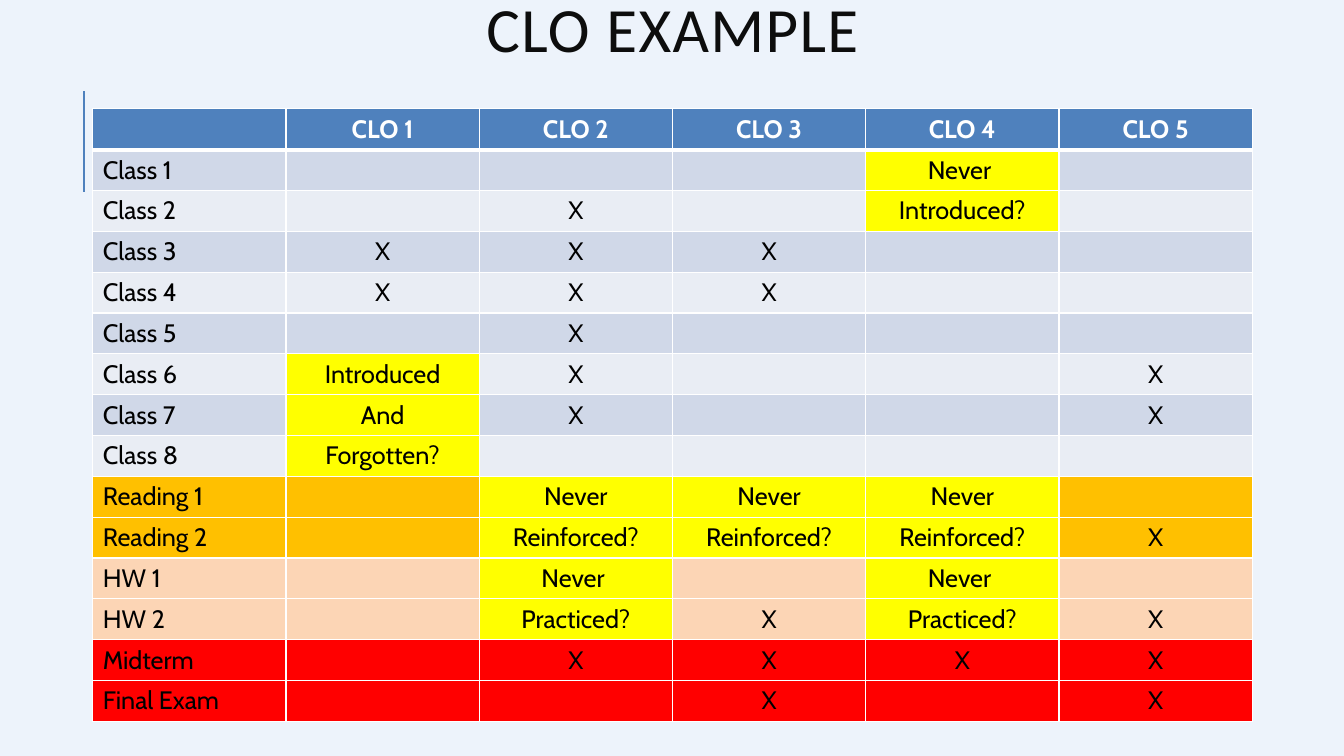
"""Build the CLO example slide: a course map of learning outcomes by activity."""
from dataclasses import dataclass

from lxml.etree import SubElement
from pptx import Presentation
from pptx.dml.color import RGBColor
from pptx.enum.shapes import MSO_CONNECTOR
from pptx.enum.text import MSO_ANCHOR, PP_ALIGN
from pptx.oxml import parse_xml
from pptx.oxml.ns import nsdecls, qn
from pptx.util import Inches, Pt

COLORS = {
    "background": "EDF3FB",
    "accent": "4F81BD",
    "title": "0D0D0D",
    "text": "000000",
    "white": "FFFFFF",
    "band_dark": "D0D8E8",
    "band_light": "E9EDF4",
    "reading": "FFC000",
    "homework": "FCD5B5",
    "exam": "FF0000",
    "gap": "FFFF00",
}


@dataclass(frozen=True)
class Activity:
    name: str
    fill: str
    marks: tuple[str, str, str, str, str]


HEADER = Activity("", "accent", ("CLO 1", "CLO 2", "CLO 3", "CLO 4", "CLO 5"))
ACTIVITIES = [
    Activity("Class 1", "band_dark", ("", "", "", "Never ", "")),
    Activity("Class 2", "band_light", ("", "X", "", "Introduced?", "")),
    Activity("Class 3", "band_dark", ("X", "X", "X", "", "")),
    Activity("Class 4", "band_light", ("X", "X", "X", "", "")),
    Activity("Class 5", "band_dark", ("", "X", "", "", "")),
    Activity("Class 6", "band_light", ("Introduced", "X", "", "", "X")),
    Activity("Class 7", "band_dark", ("And", "X", "", "", "X")),
    Activity("Class 8", "band_light", ("Forgotten?", "", "", "", "")),
    Activity("Reading 1", "reading", ("", "Never", "Never", "Never", "")),
    Activity("Reading 2", "reading", ("", "Reinforced?", "Reinforced?", "Reinforced?", "X")),
    Activity("HW 1", "homework", ("", "Never ", "", "Never ", "")),
    Activity("HW 2", "homework", ("", "Practiced?", "X", "Practiced?", "X")),
    Activity("Midterm", "exam", ("", "X", "X", "X", "X")),
    Activity("Final Exam", "exam", ("", "", "X", "", "X")),
]


def color(name: str) -> RGBColor:
    return RGBColor.from_string(COLORS[name])


def add_span(para, text: str, font_name: str, size: float, color_name: str, bold: bool = False):
    span = para.add_run()
    span.text = text
    span.font.name = font_name
    span.font.size = Pt(size)
    span.font.bold = bold
    span.font.color.rgb = color(color_name)
    return span


def add_title(page) -> None:
    box = page.shapes.add_textbox(Inches(0.92), Inches(0), Inches(11.5), Inches(0.68))
    frame = box.text_frame
    frame.word_wrap = True
    frame.vertical_anchor = MSO_ANCHOR.MIDDLE
    para = frame.paragraphs[0]
    para.alignment = PP_ALIGN.CENTER
    para.line_spacing = 0.8
    span = add_span(para, "CLO EXAMPLE", "Calibri", 45, "title")
    span.font._element.set("spc", "100")


def add_accent_line(page) -> None:
    line = page.shapes.add_connector(
        MSO_CONNECTOR.STRAIGHT, Inches(0.83), Inches(1.9), Inches(0.83), Inches(0.9)
    )
    line.line.color.rgb = color("accent")
    line.line.width = Pt(1.5)
    SubElement(line._element.spPr, qn("a:effectLst"))


def set_borders(cell, top: float, bottom: float) -> None:
    properties = cell._tc.get_or_add_tcPr()
    widths = {"lnL": 1, "lnR": 1, "lnT": top, "lnB": bottom}
    for index, (side, width) in enumerate(widths.items()):
        border = parse_xml(
            f'<a:{side} {nsdecls("a")} w="{Pt(width)}"><a:solidFill>'
            f'<a:srgbClr val="{COLORS["white"]}"/></a:solidFill></a:{side}>'
        )
        properties.insert(index, border)


def fill_row(table, row: int, activity: Activity) -> None:
    is_header = activity is HEADER
    for column, text in enumerate((activity.name, *activity.marks)):
        cell = table.cell(row, column)
        is_gap = not is_header and column > 0 and text not in ("", "X")
        cell.fill.solid()
        cell.fill.fore_color.rgb = color("gap" if is_gap else activity.fill)
        set_borders(cell, top=3 if row == 1 else 1, bottom=3 if is_header else 1)
        if text:
            para = cell.text_frame.paragraphs[0]
            para.alignment = PP_ALIGN.CENTER if column else PP_ALIGN.LEFT
            add_span(para, text, "Cabin", 18, "white" if is_header else "text", is_header)


def add_course_map(page) -> None:
    rows = [HEADER, *ACTIVITIES]
    table = page.shapes.add_table(
        len(rows), len(HEADER.marks) + 1, Inches(0.92), Inches(1.08), Inches(11.5), Inches(6.08)
    ).table
    table.horz_banding = False
    for row, activity in enumerate(rows):
        fill_row(table, row, activity)


def main() -> None:
    deck = Presentation()
    deck.slide_width = Inches(13.33)
    deck.slide_height = Inches(7.5)
    page = deck.slides.add_slide(deck.slide_layouts[6])
    page.background.fill.solid()
    page.background.fill.fore_color.rgb = color("background")
    add_accent_line(page)
    add_title(page)
    add_course_map(page)
    deck.save("out.pptx")


if __name__ == "__main__":
    main()
